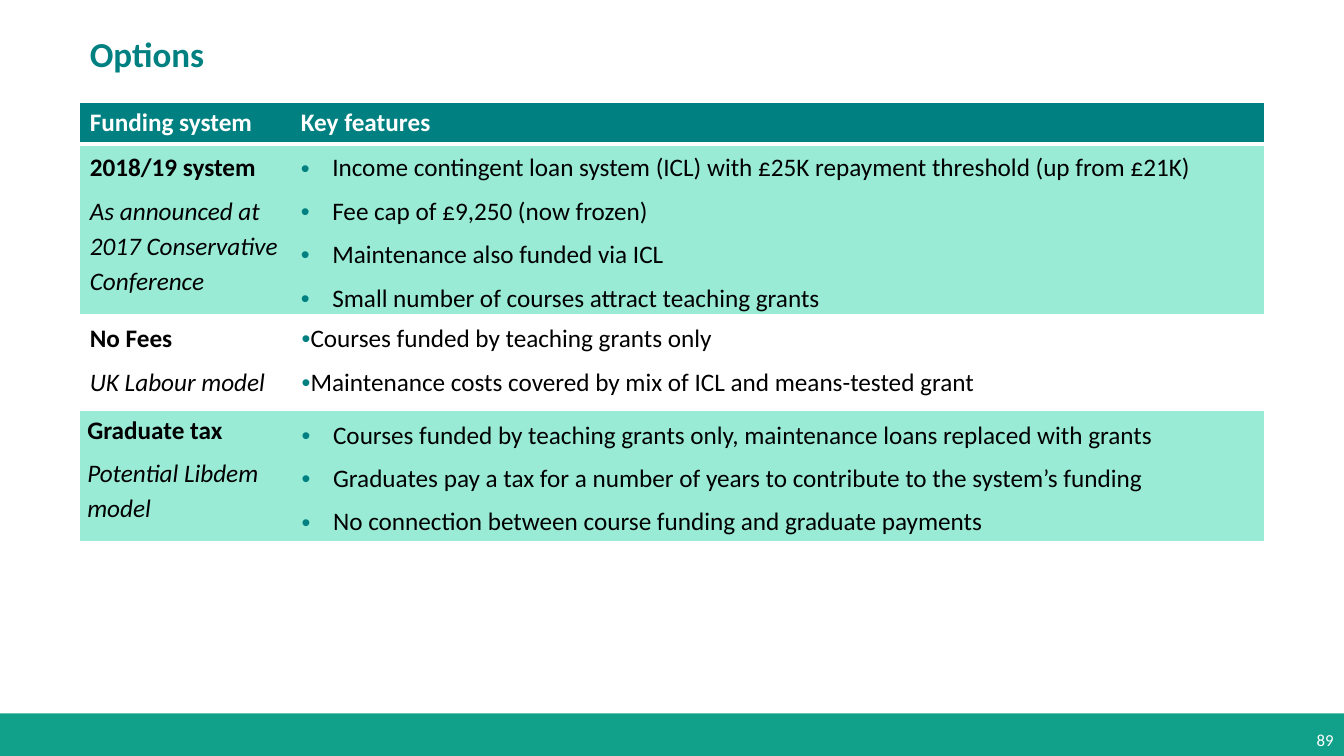
from lxml.etree import SubElement as Sub
from pptx import Presentation
from pptx.dml.color import RGBColor as RGB
from pptx.enum.shapes import MSO_SHAPE as SHAPE
from pptx.enum.text import MSO_ANCHOR as ANCHOR, MSO_AUTO_SIZE as FIT, PP_ALIGN as ALIGN
from pptx.oxml.ns import qn
from pptx.util import Cm, Pt

COLORS = {"teal": "008080", "mint": "99EBD6", "bar": "11A08A",
          "white": "FFFFFF", "black": "000000"}
NO_STYLE = "{2D5ABB26-0587-4C30-8999-92F81FD0307C}"
LEFT = 2.01
HANG = 0.79


def color(name):
    return RGB.from_string(COLORS[name])


class Deck:
    font = "Calibri"

    def __init__(self, width, height):
        self.prs = Presentation()
        self.prs.slide_width, self.prs.slide_height = Cm(width), Cm(height)
        self.s = self.prs.slides.add_slide(self.prs.slide_layouts[5])

    def style(self, p, size, fg, bold=False, italic=False):
        f = p.font
        f.name, f.size, f.bold, f.italic = self.font, Pt(size), bold, italic
        f.color.rgb = color(fg)

    def title(self, text, *box):
        sp = self.s.shapes.title
        sp.left, sp.top, sp.width, sp.height = map(Cm, box)
        tf = sp.text_frame
        tf.text = text
        tf.vertical_anchor, tf.auto_size = ANCHOR.TOP, FIT.NONE
        p = tf.paragraphs[0]
        p.alignment = ALIGN.LEFT
        self.style(p, 25, "teal", bold=True)

    def bar(self, fill, *box):
        sp = self.s.shapes.add_shape(SHAPE.RECTANGLE, *map(Cm, box))
        sp.shadow.inherit = False
        sp.fill.solid()
        sp.fill.fore_color.rgb = color(fill)
        sp.line.fill.background()

    def page_number(self, text, *box):
        tf = self.s.shapes.add_textbox(*map(Cm, box)).text_frame
        tf.word_wrap, tf.vertical_anchor = True, ANCHOR.MIDDLE
        p = tf.paragraphs[0]
        p.text, p.alignment = text, ALIGN.RIGHT
        self.style(p, 12, "white")

    def bullet(self, p, margin):
        pPr = p._p.get_or_add_pPr()
        pPr.set("marL", str(Cm(margin)))
        pPr.set("indent", str(-Cm(HANG)))
        Sub(Sub(pPr, qn("a:buClr")), qn("a:srgbClr"), val=COLORS["teal"])
        Sub(pPr, qn("a:buFont"), typeface="Arial")
        Sub(pPr, qn("a:buChar"), char="•")

    def borders(self, cell, sides):
        tcPr = cell._tc.get_or_add_tcPr()
        for side, width in sides.items():
            ln = Sub(tcPr, qn(f"a:ln{side}"), w=str(Pt(width)))
            Sub(Sub(ln, qn("a:solidFill")), qn("a:srgbClr"), val=COLORS["white"])

    def cell(self, cell, lines, fill, sides, header, bullet_margin):
        self.borders(cell, sides)
        cell.fill.solid()
        cell.fill.fore_color.rgb = color(fill)
        if not lines:
            return
        tf = cell.text_frame
        tf.text = "\n".join(lines)
        for i, p in enumerate(tf.paragraphs):
            if header:
                self.style(p, 18, "white", bold=True)
                continue
            features = bullet_margin is not None
            if features:
                self.bullet(p, bullet_margin)
            p.line_spacing, p.space_after = 1.14, Pt(6)
            first = i == 0
            self.style(p, 18, "black", bold=first and not features,
                       italic=not first and not features)

    def table(self, top, widths, rows, bullet_margin=HANG, header=False):
        heights = [height for height, _, _ in rows]
        frame = self.s.shapes.add_table(len(rows), 2, Cm(LEFT), Cm(top),
                                        Cm(sum(widths)), Cm(sum(heights)))
        tbl = frame.table
        tbl._tbl.tblPr.find(qn("a:tableStyleId")).text = NO_STYLE
        for col, width in zip(tbl.columns, widths):
            col.width = Cm(width)
        for r, (height, fill, texts) in enumerate(rows):
            tbl.rows[r].height = Cm(height)
            for c, lines in enumerate(texts):
                sides = {"R" if c else "L": 1}
                if r == 0:
                    sides.update(T=1, B=3)
                self.cell(tbl.cell(r, c), lines, fill, sides, header and r == 0,
                          bullet_margin if c else None)
        return tbl


def main():
    d = Deck(33.87, 19.05)
    spare = (2.46, "white", ([], []))
    d.table(2.59, (5.32, 24.53), [
        (0.61, "teal", (["Funding system"], ["Key features"])),
        (4.11, "mint", (
            ["2018/19 system", "As announced at 2017 Conservative Conference"],
            ["Income contingent loan system (ICL) with £25K repayment threshold (up from £21K)",
             "Fee cap of £9,250 (now frozen)",
             "Maintenance also funded via ICL",
             "Small number of courses attract teaching grants"])),
        spare, spare,
    ], header=True)
    d.bar("bar", 0, 17.98, 33.87, 1.07)
    d.title("Options", LEFT, 0.69, 10.59, 1.32)
    d.table(7.92, (5.34, 24.72), [
        (2.44, "white", (
            ["No Fees", "UK Labour model"],
            ["Courses funded by teaching grants only",
             "Maintenance costs covered by mix of ICL and means-tested grant"])),
    ], bullet_margin=0)
    tax = d.table(10.35, (5.34, 24.52), [
        (3.23, "mint", (
            ["Graduate tax", "Potential Libdem model"],
            ["Courses funded by teaching grants only, maintenance loans replaced with grants",
             "Graduates pay a tax for a number of years to contribute to the system’s funding",
             "No connection between course funding and graduate payments"])),
    ])
    name = tax.cell(0, 0)
    name.margin_left = name.margin_right = Cm(0.19)
    name.margin_top = name.margin_bottom = 0
    d.page_number("89", 26.24, 18.14, 7.62, 1.02)
    d.prs.save("out.pptx")


if __name__ == "__main__":
    main()
